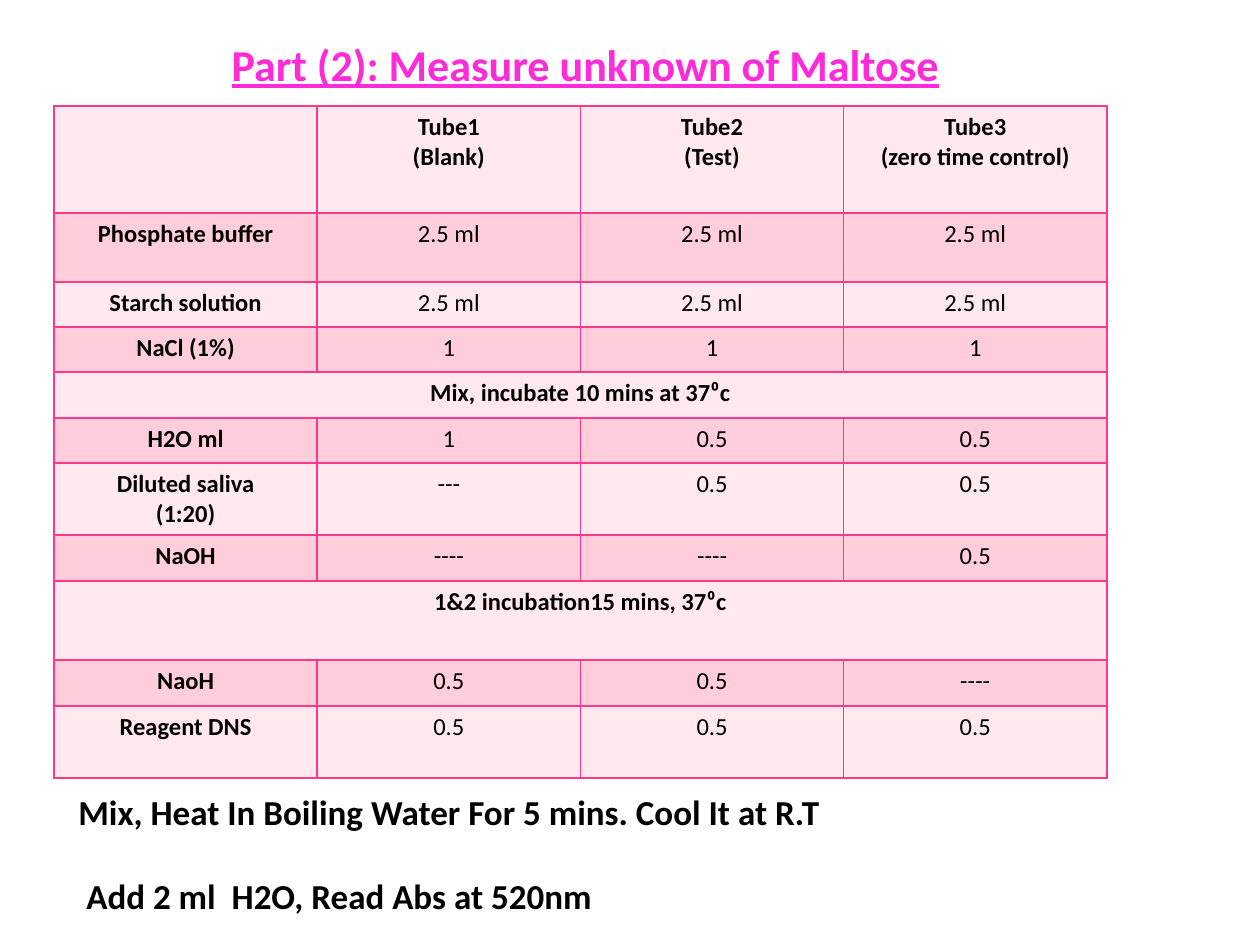
"""Build the slide with the tube table for measuring unknown maltose."""
from lxml.etree import SubElement
from pptx import Presentation
from pptx.dml.color import RGBColor
from pptx.enum.text import MSO_ANCHOR as Anchor, PP_ALIGN as Align
from pptx.oxml.ns import qn
from pptx.util import Emu, Pt

PINK = RGBColor(0xFF, 0x2B, 0xD8)
BORDER = RGBColor(0xFF, 0x38, 0x8C)
LIGHT = RGBColor(0xFF, 0xE8, 0xEE)
MEDIUM = RGBColor(0xFF, 0xCE, 0xDA)
BLACK = RGBColor(0, 0, 0)


def px(length):
    return Emu(round(length * 914400 / 126))


def write(frame, text, size=14, color=BLACK, bold=True, underline=False,
          align=Align.LEFT, gap=0, last_indent=0):
    frame.text = text
    for index, paragraph in enumerate(frame.paragraphs):
        paragraph.alignment = align
        if index:
            paragraph.space_before = Pt(gap)
        font = paragraph.runs[0].font
        font.name, font.size, font.bold = "Calibri", Pt(size), bold
        font.underline = underline
        font.color.rgb = color
    if last_indent:
        paragraph._p.get_or_add_pPr().set("marL", str(px(last_indent)))


presentation = Presentation()
presentation.slide_width, presentation.slide_height = px(1260), px(945)
slide = presentation.slides.add_slide(presentation.slide_layouts[5])

title = slide.shapes.title
title.left, title.top, title.width, title.height = px(219), px(30), px(878), px(68)
title.text_frame.vertical_anchor = Anchor.MIDDLE
write(title.text_frame, "Part (2): Measure unknown of Maltose",
      size=25.2, color=PINK, underline=True)

rows = [
    (107, ["", "Tube1\n(Blank)", "Tube2\n(Test)", "Tube3\n(zero time control)"]),
    (69, ["Phosphate buffer", "2.5 ml", "2.5 ml", "2.5 ml"]),
    (45, ["Starch solution", "2.5 ml", "2.5 ml", "2.5 ml"]),
    (45, ["NaCl (1%)", "1", "1", "1"]),
    (46, ["Mix, incubate 10 mins at 37⁰c"]),
    (45, ["H2O ml", "1", "0.5", "0.5"]),
    (72, ["Diluted saliva\n(1:20)", "---", "0.5", "0.5"]),
    (46, ["NaOH", "----", "----", "0.5"]),
    (79, ["1&2 incubation15 mins, 37⁰c"]),
    (46, ["NaoH", "0.5", "0.5", "----"]),
    (72, ["Reagent DNS", "0.5", "0.5", "0.5"]),
]
table_height = sum(height for height, _ in rows)
table = slide.shapes.add_table(len(rows), 4, px(54), px(106),
                               px(1053), px(table_height)).table
for row_index, (height, texts) in enumerate(rows):
    table.rows[row_index].height = px(height)
    if len(texts) == 1:
        table.cell(row_index, 0).merge(table.cell(row_index, 3))
    for column_index in range(4):
        cell = table.cell(row_index, column_index)
        properties = cell._tc.get_or_add_tcPr()
        for side in ("a:lnL", "a:lnR", "a:lnT", "a:lnB"):
            line = SubElement(properties, qn(side), w=str(Pt(1)))
            SubElement(SubElement(line, qn("a:solidFill")), qn("a:srgbClr"), val=str(BORDER))
        cell.fill.solid()
        cell.fill.fore_color.rgb = MEDIUM if row_index % 2 else LIGHT
        if column_index < len(texts) and texts[column_index]:
            write(cell.text_frame, texts[column_index], align=Align.CENTER,
                  bold=row_index == 0 or column_index == 0)

steps = slide.shapes.add_textbox(px(66), px(742), px(1032), px(183)).text_frame
steps.word_wrap = True
steps.margin_top = px(48)
write(steps, "Mix, Heat In Boiling Water For 5 mins. Cool It at R.T\n"
      "Add 2 ml  H2O, Read Abs at 520nm", size=20, gap=24, last_indent=8)

presentation.save("out.pptx")
